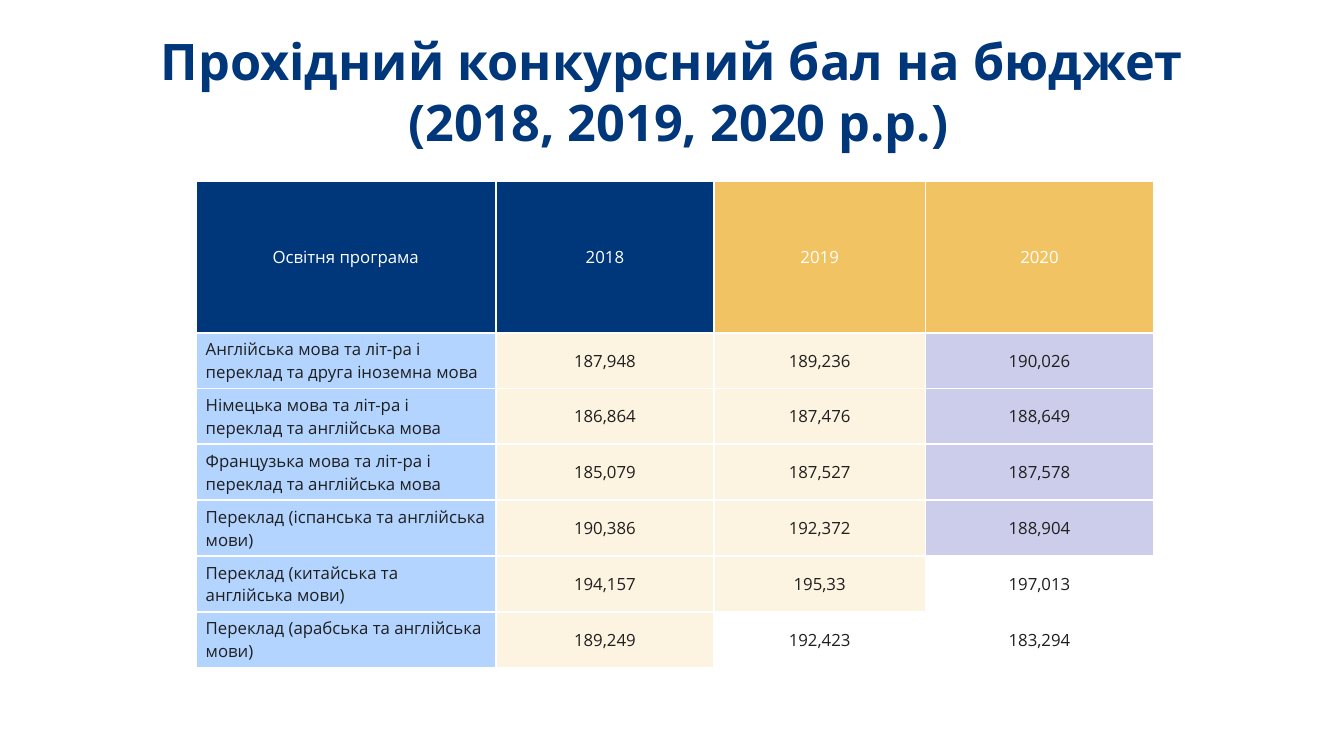
from pptx import Presentation
from pptx.dml.color import RGBColor
from pptx.enum.text import MSO_ANCHOR, MSO_AUTO_SIZE, PP_ALIGN
from pptx.oxml import parse_xml
from pptx.oxml.ns import nsdecls
from pptx.util import Inches, Pt

LEFT, CENTER = PP_ALIGN.LEFT, PP_ALIGN.CENTER
MIDDLE = MSO_ANCHOR.MIDDLE
GROW = MSO_AUTO_SIZE.SHAPE_TO_FIT_TEXT

FONT = "Open Sans"
NAVY, GOLD, WHITE, INK = "00377B", "F2C362", "FFFFFF", "1F1F1F"
BLUE, CREAM, LILAC = "B2D4FF", "FCF3E0", "CBCDEA"

TITLE = "Прохідний конкурсний бал на бюджет \v(2018, 2019, 2020 р.р.)"
HEAD = ["Освітня програма", "2018", "2019", "2020"]
SCORES = [
    ["Англійська мова та літ-ра і переклад та друга іноземна мова",
     "187,948", "189,236", "190,026"],
    ["Німецька мова та літ-ра і переклад та англійська мова",
     "186,864", "187,476", "188,649"],
    ["Французька мова та літ-ра і переклад та англійська мова",
     "185,079", "187,527", "187,578"],
    ["Переклад (іспанська та англійська мови)",
     "190,386", "192,372", "188,904"],
    ["Переклад (китайська та англійська мови)",
     "194,157", "195,33", "197,013"],
    ["Переклад (арабська та англійська мови)",
     "189,249", "192,423", "183,294"],
]
HEAD_FILLS = [NAVY, NAVY, GOLD, GOLD]
# Each column's fill and the number of score rows it covers
BODY_FILLS = [(BLUE, 6), (CREAM, 6), (CREAM, 5), (LILAC, 4)]
WIDTHS = [2.98, 2.16, 2.1, 2.26]
HEAD_HIGH, ROW_HIGH = 1.5, 0.55


def rgb(code):
    return RGBColor.from_string(code)


def style(para, size, color, align, bold=False):
    para.alignment = align
    font = para.font
    font.name, font.size, font.bold = FONT, Pt(size), bold
    font.color.rgb = rgb(color)


def add_title(slide):
    box = slide.shapes.add_textbox(
        Inches(1.02), Inches(0.25), Inches(11.42), Inches(1.31))
    frame = box.text_frame
    frame.word_wrap = True
    frame.auto_size = GROW
    frame.text = TITLE
    style(frame.paragraphs[0], 36, NAVY, CENTER, True)


def add_edges(cell):
    props = cell._tc.get_or_add_tcPr()
    for spot, side in enumerate(("lnL", "lnR", "lnT", "lnB")):
        props.insert(spot, parse_xml(
            f'<a:{side} {nsdecls("a")} w="{Pt(1.5)}"><a:solidFill>'
            f'<a:srgbClr val="{WHITE}"/></a:solidFill></a:{side}>'))


def fill_cell(cell, text, fill, color, align):
    cell.text = text
    cell.vertical_anchor = MIDDLE
    style(cell.text_frame.paragraphs[0], 12, color, align)
    if fill:
        cell.fill.solid()
        cell.fill.fore_color.rgb = rgb(fill)
    else:
        cell.fill.background()
    add_edges(cell)


def add_scores(slide):
    high = HEAD_HIGH + ROW_HIGH * len(SCORES)
    table = slide.shapes.add_table(
        len(SCORES) + 1, len(HEAD), Inches(1.94), Inches(1.8),
        Inches(sum(WIDTHS)), Inches(high)).table
    for col, width in zip(table.columns, WIDTHS):
        col.width = Inches(width)
    for row in table.rows:
        row.height = Inches(ROW_HIGH)
    table.rows[0].height = Inches(HEAD_HIGH)

    # Header row
    for c, (text, fill) in enumerate(zip(HEAD, HEAD_FILLS)):
        fill_cell(table.cell(0, c), text, fill, WHITE, CENTER)

    # Score rows
    for r, texts in enumerate(SCORES, 1):
        for c, (text, (fill, last)) in enumerate(zip(texts, BODY_FILLS)):
            fill_cell(table.cell(r, c), text, fill if r <= last else None,
                      INK, CENTER if c else LEFT)


def main():
    deck = Presentation()
    deck.slide_width, deck.slide_height = Inches(13.33), Inches(7.5)
    slide = deck.slides.add_slide(deck.slide_layouts[6])
    add_scores(slide)
    add_title(slide)
    deck.save("out.pptx")


if __name__ == "__main__":
    main()
